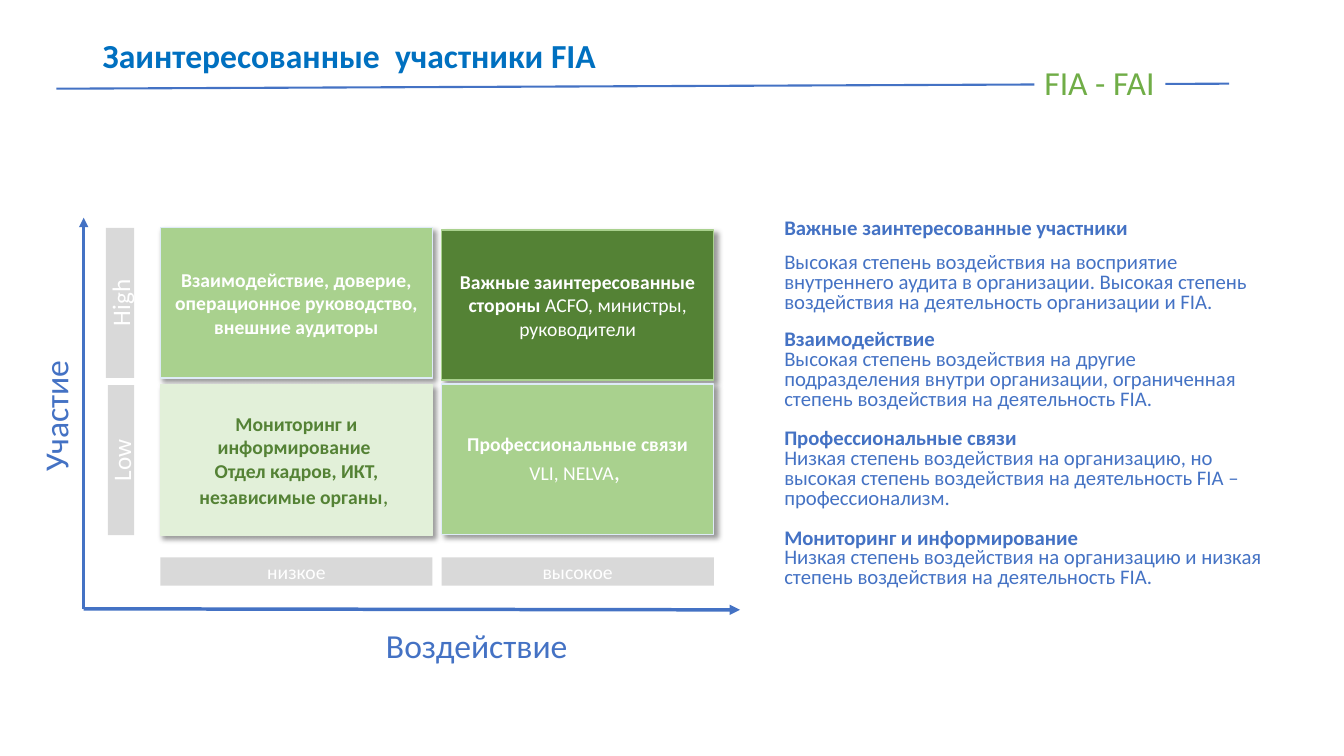
from lxml import etree
from pptx import Presentation
from pptx.dml.color import RGBColor
from pptx.enum.shapes import MSO_CONNECTOR, MSO_SHAPE
from pptx.enum.text import MSO_ANCHOR, PP_ALIGN
from pptx.oxml import parse_xml
from pptx.oxml.ns import nsdecls, qn
from pptx.util import Pt

RECT, STRAIGHT = MSO_SHAPE.RECTANGLE, MSO_CONNECTOR.STRAIGHT
TOP, MIDDLE = MSO_ANCHOR.TOP, MSO_ANCHOR.MIDDLE
LEFT, CENTER = PP_ALIGN.LEFT, PP_ALIGN.CENTER
PX = 9144  # 100 px to the inch

THEME = {
    "font": "Calibri",
    "blue": "4472C4", "title": "0070C0", "brand": "70AD47", "white": "FFFFFF",
    "grey": "D9D9D9", "pale": "E2F0D9", "light": "A9D18E", "dark": "548235",
    "ice": "DEEBF7",
    "heading_size": 24, "level_size": 18, "cell_size": 14, "notes_size": 14.8,
}

SHADOW = (
    f'<a:effectLst {nsdecls("a")}><a:outerShdw blurRad="50800" dist="38100" '
    'dir="2700000" algn="tl" rotWithShape="0"><a:srgbClr val="000000">'
    '<a:alpha val="40000"/></a:srgbClr></a:outerShdw></a:effectLst>'
)


def add_box(place, paragraphs, color, size, fill=None, align=LEFT, anchor=MIDDLE, wrap=True):
    """Add a text box, or a rectangle if fill is given.

    Each paragraph is a list of (text, bold) or (text, bold, size) spans.
    """
    place = [value * PX for value in place]
    if fill:
        box = page.shapes.add_shape(RECT, *place)
        box.shadow.inherit = False
        box.fill.solid()
        box.fill.fore_color.rgb = RGBColor.from_string(THEME[fill])
        box.line.fill.background()
    else:
        box = page.shapes.add_textbox(*place)
    frame = box.text_frame
    frame.word_wrap = wrap
    frame.vertical_anchor = anchor
    for index, spans in enumerate(paragraphs):
        para = frame.paragraphs[0] if index == 0 else frame.add_paragraph()
        para.alignment = align
        for text, bold, *own_size in spans:
            span = para.add_run()
            span.text = text
            span.font.name = THEME["font"]
            span.font.size = Pt(own_size[0] if own_size else size)
            span.font.bold = bold
            span.font.color.rgb = RGBColor.from_string(THEME[color])
    return box


def add_line(start, end, width, arrow=False):
    line = page.shapes.add_connector(STRAIGHT, *[value * PX for value in start + end])
    line.line.color.rgb = RGBColor.from_string(THEME["blue"])
    line.line.width = Pt(width)
    properties = line._element.spPr
    if arrow:
        etree.SubElement(properties.find(qn("a:ln")), qn("a:tailEnd"), type="triangle")
    etree.SubElement(properties, qn("a:effectLst"))


deck = Presentation()
deck.slide_width, deck.slide_height = 1333 * PX, 750 * PX
page = deck.slides.add_slide(deck.slide_layouts[6])

# Header
heading_size = THEME["heading_size"]
add_line((56, 88), (1219, 83), 1.5)
add_box((1026, 57, 130, 50), [[("FIA - FAI", False)]], "brand", heading_size,
        fill="white", anchor=TOP, wrap=False)
title = add_box((92, 40, 1150, 35), [[("Заинтересованные  участники FIA", True)]],
                "title", heading_size)
title.text_frame.paragraphs[0].line_spacing = 0.9

# Explanations: heading, text, space before heading, space before text
explanations = [
    ("Важные заинтересованные участники",
     "Высокая степень воздействия на восприятие внутреннего аудита в организации. "
     "Высокая степень воздействия на деятельность организации и FIA.", 0, 10),
    ("Взаимодействие",
     "Высокая степень воздействия на другие подразделения внутри организации, "
     "ограниченная степень воздействия на деятельность FIA.", 12.6, 0),
    ("Профессиональные связи",
     "Низкая степень воздействия на организацию, но высокая степень воздействия "
     "на деятельность FIA – профессионализм.", 14, 0),
    ("Мониторинг и информирование",
     "Низкая степень воздействия на организацию и низкая степень воздействия "
     "на деятельность FIA.", 14, 0),
]
lines, gaps = [], []
for heading, text, heading_gap, text_gap in explanations:
    lines += [[(heading, True)], [(text, False)]]
    gaps += [heading_gap, text_gap]
notes = add_box((768, 213, 502, 395), lines, "blue", THEME["notes_size"], anchor=TOP)
for para, gap in zip(notes.text_frame.paragraphs, gaps):
    para.line_spacing = 0.8
    para.space_before = Pt(gap)

# Matrix: left, top, fill, outline, text colour, paragraphs
COLUMNS, CELL_WIDTH, CELL_HEIGHT = (159, 438), 270, 149
cell_size = THEME["cell_size"]
quadrants = [
    (COLUMNS[0], 226, "light", "ice", "white",
     [[("Взаимодействие, доверие, операционное руководство, внешние аудиторы", True)]]),
    (COLUMNS[1], 228, "dark", "light", "white",
     [[("Важные заинтересованные стороны ", True), ("ACFO, министры, руководители", False)]]),
    (COLUMNS[0], 382, "pale", "pale", "dark",
     [[("Мониторинг и информирование ", True)],
      [("Отдел кадров, ИКТ, независимые органы", True), (", ", False, 16)]]),
    (COLUMNS[1], 381, "light", "ice", "white",
     [[("Профессиональные связи ", True), ("VLI, NELVA", False), (", ", False, 18)]]),
]
for left, top, fill, outline, color, paragraphs in quadrants:
    cell = add_box((left, top, CELL_WIDTH, CELL_HEIGHT), paragraphs, color, cell_size,
                   fill=fill, align=CENTER)
    cell.line.color.rgb = RGBColor.from_string(THEME[outline])
    cell.line.width = Pt(1)
    properties = cell._element.spPr
    properties.replace(properties.find(qn("a:effectLst")), parse_xml(SHADOW))

# Level labels
for left, label in zip(COLUMNS, ("низкое", "высокое")):
    add_box((left, 553, CELL_WIDTH, 28), [[(label, False)]], "white", cell_size,
            fill="grey", align=CENTER)
for left, top, width, label in ((107, 382, 26, "Low"), (105, 226, 28, "High")):
    level = add_box((left, top, width, CELL_HEIGHT), [[(label, False)]], "white",
                    THEME["level_size"], fill="grey", align=CENTER)
    level.text_frame._txBody.bodyPr.set("vert", "vert270")

# Axes
origin = (83, 604)
add_line(origin, (734, 605), 2.5, arrow=True)
add_line(origin, (83, 216), 2.25, arrow=True)
for place, label, turn in (((373, 615, 202, 50), "Воздействие", 0),
                           ((-15, 383, 139, 50), "Участие", 270)):
    axis_title = add_box(place, [[(label, False)]], "blue", heading_size,
                         anchor=TOP, wrap=False)
    axis_title.rotation = turn

deck.save("out.pptx")
